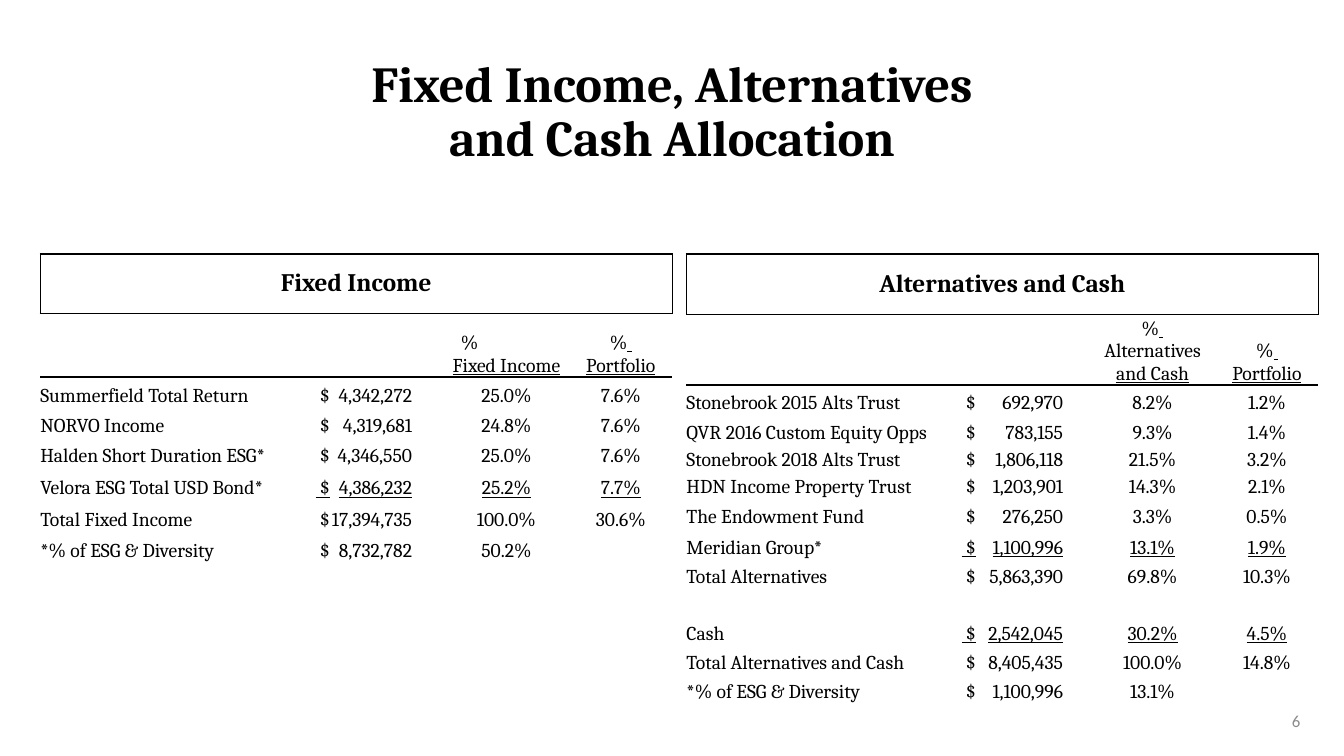
from lxml.etree import SubElement
from pptx import Presentation
from pptx.dml.color import RGBColor
from pptx.enum.text import MSO_ANCHOR as Anchor, MSO_AUTO_SIZE as AutoSize, PP_ALIGN as Align
from pptx.oxml.ns import qn
from pptx.util import Pt

COLORS = {"ink": "000000", "number": "8C8C8C"}
PLAIN_STYLE = "{2D5ABB26-0587-4C30-8999-92F81FD0307C}"
COLUMN_WIDTHS = (196.6, 91.4, 90, 73.4)
TABLE_TOP = 181.4

PORTFOLIO_HEADING = [[("%", False), (" ", True)], [("Portfolio", True)]]
FIXED_HEADING = [[("%", False)], [("Fixed Income", True)]]
ALTERNATIVES_HEADING = [
    [("%", False), (" ", True)],
    [("Alternatives", False)],
    [("and Cash", True)],
]

FIXED_ROWS = [
    ("Summerfield Total Return", "4,342,272", "25.0%", "7.6%"),
    ("NORVO Income", "4,319,681", "24.8%", "7.6%"),
    ("Halden Short Duration ESG*", "4,346,550", "25.0%", "7.6%"),
    ("Velora ESG Total USD Bond*", "4,386,232", "25.2%", "7.7%"),
    ("Total Fixed Income", "17,394,735", "100.0%", "30.6%"),
    ("*% of ESG & Diversity", "8,732,782", "50.2%", ""),
]
ALTERNATIVES_ROWS = [
    ("Stonebrook 2015 Alts Trust", "692,970", "8.2%", "1.2%"),
    ("QVR 2016 Custom Equity Opps", "783,155", "9.3%", "1.4%"),
    ("Stonebrook 2018 Alts Trust", "1,806,118", "21.5%", "3.2%"),
    ("HDN Income Property Trust", "1,203,901", "14.3%", "2.1%"),
    ("The Endowment Fund", "276,250", "3.3%", "0.5%"),
    ("Meridian Group*", "1,100,996", "13.1%", "1.9%"),
    ("Total Alternatives", "5,863,390", "69.8%", "10.3%"),
    ("", "", "", ""),
    ("Cash", "2,542,045", "30.2%", "4.5%"),
    ("Total Alternatives and Cash", "8,405,435", "100.0%", "14.8%"),
    ("*% of ESG & Diversity", "1,100,996", "13.1%", ""),
]
FIXED_HEIGHTS = (42.5, 45.4, 21.6, 21.6, 21.6, 23, 22.3, 22.3)
ALTERNATIVES_HEIGHTS = (
    43.2, 45.4, 20.9, 21.6, 19.4, 19.4, 20.9, 22.3, 20.9, 19.4, 20.9, 20.9, 20.9,
)


def add_run(paragraph, text, size=14, bold=False, underline=False, font="Cambria", color="ink"):
    """Append one formatted run to a paragraph."""
    run = paragraph.add_run()
    run.text = text
    run.font.size = Pt(size)
    run.font.bold = bold
    run.font.underline = underline
    run.font.name = font
    run.font.color.rgb = RGBColor.from_string(COLORS[color])


def add_right_tab(paragraph, position):
    """Give a paragraph a right-aligned tab stop."""
    tabs = SubElement(paragraph._p.get_or_add_pPr(), qn("a:tabLst"))
    SubElement(tabs, qn("a:tab"), pos=str(Pt(position)), algn="r")


def draw_borders(cell, sides):
    """Draw one-point lines on the named sides of a cell."""
    properties = cell._tc.get_or_add_tcPr()
    for side in sides:
        line = SubElement(properties, qn(f"a:ln{side}"), w=str(Pt(1)))
        fill = SubElement(line, qn("a:solidFill"))
        SubElement(fill, qn("a:srgbClr"), val=COLORS["ink"])


def prepare_cell(cell):
    """Clear a cell's fill and margins and anchor its text at the bottom."""
    cell.fill.background()
    cell.margin_left = cell.margin_right = cell.margin_top = cell.margin_bottom = 0
    cell.vertical_anchor = Anchor.BOTTOM


def fill_heading(cell, lines):
    """Write a centred column heading, one paragraph per line."""
    frame = cell.text_frame
    for index, line in enumerate(lines):
        paragraph = frame.add_paragraph() if index else frame.paragraphs[0]
        paragraph.alignment = Align.CENTER
        for text, underline in line:
            add_run(paragraph, text, underline=underline)


def fill_value(cell, column, text, underline, tab_position):
    """Write one holding's name, amount or percentage."""
    paragraph = cell.text_frame.paragraphs[0]
    if not text:
        SubElement(paragraph._p, qn("a:endParaRPr"), sz="1400")
        return
    if column == 1:
        add_right_tab(paragraph, tab_position)
        text = f" $\t{text}"
    elif column > 1:
        paragraph.alignment = Align.CENTER
    add_run(paragraph, text, underline=underline and column > 0)


def add_allocation_table(slide, left, title, heading, rows, heights, underlined, tab_position):
    """Add one allocation table with its boxed title and column headings."""
    frame = slide.shapes.add_table(
        len(heights), len(COLUMN_WIDTHS), Pt(left), Pt(TABLE_TOP),
        Pt(sum(COLUMN_WIDTHS)), Pt(sum(heights)),
    )
    table = frame.table
    table.first_row = table.horz_banding = False
    table._tbl.tblPr.find(qn("a:tableStyleId")).text = PLAIN_STYLE
    for column, width in zip(table.columns, COLUMN_WIDTHS):
        column.width = Pt(width)
    for row, height in zip(table.rows, heights):
        row.height = Pt(height)
    for column, sides in enumerate(("LRTB", "TB", "TB", "RTB")):
        draw_borders(table.cell(0, column), sides)
        draw_borders(table.cell(1, column), "T")
    for cell in table.iter_cells():
        prepare_cell(cell)

    title_cell = table.cell(0, 0)
    title_cell.merge(table.cell(0, len(COLUMN_WIDTHS) - 1))
    title_cell.vertical_anchor = Anchor.MIDDLE
    paragraph = title_cell.text_frame.paragraphs[0]
    paragraph.alignment = Align.CENTER
    add_run(paragraph, title, size=18, bold=True)
    fill_heading(table.cell(1, 2), heading)
    fill_heading(table.cell(1, 3), PORTFOLIO_HEADING)
    for index, values in enumerate(rows):
        for column, text in enumerate(values):
            fill_value(table.cell(index + 2, column), column, text, index in underlined, tab_position)
    return table


def indent_percent_sign(cell):
    """Set the first heading line to the left with an indent."""
    paragraph = cell.text_frame.paragraphs[0]
    paragraph.alignment = Align.LEFT
    paragraph._p.get_or_add_pPr().set("marL", str(Pt(12.5)))


def add_title(slide):
    """Place and write the slide title."""
    title = slide.shapes.title
    title.left, title.top, title.width, title.height = Pt(66), Pt(28.8), Pt(828), Pt(104.4)
    frame = title.text_frame
    frame.auto_size = AutoSize.NONE
    frame.vertical_anchor = Anchor.MIDDLE
    paragraph = frame.paragraphs[0]
    paragraph.alignment = Align.CENTER
    paragraph.line_spacing = 0.9
    add_run(paragraph, "Fixed Income, Alternatives", size=36, bold=True)
    paragraph.add_line_break()
    add_run(paragraph, "and Cash Allocation", size=36, bold=True)


def add_slide_number(slide):
    """Write the slide number at the lower right."""
    box = slide.shapes.add_textbox(Pt(678), Pt(500.5), Pt(258), Pt(28.8))
    frame = box.text_frame
    frame.word_wrap = True
    frame.vertical_anchor = Anchor.MIDDLE
    paragraph = frame.paragraphs[0]
    paragraph.alignment = Align.RIGHT
    add_run(paragraph, "6", size=12, font="Calibri", color="number")


def main():
    """Build and save the allocation slide."""
    presentation = Presentation()
    presentation.slide_width, presentation.slide_height = Pt(960), Pt(540)
    slide = presentation.slides.add_slide(presentation.slide_layouts[5])
    add_title(slide)
    add_slide_number(slide)
    fixed = add_allocation_table(
        slide, 28.8, "Fixed Income", FIXED_HEADING, FIXED_ROWS, FIXED_HEIGHTS, {3}, 69)
    indent_percent_sign(fixed.cell(1, 2))
    add_allocation_table(
        slide, 490.3, "Alternatives and Cash", ALTERNATIVES_HEADING,
        ALTERNATIVES_ROWS, ALTERNATIVES_HEIGHTS, {5, 8}, 72.5)
    presentation.save("out.pptx")


if __name__ == "__main__":
    main()
